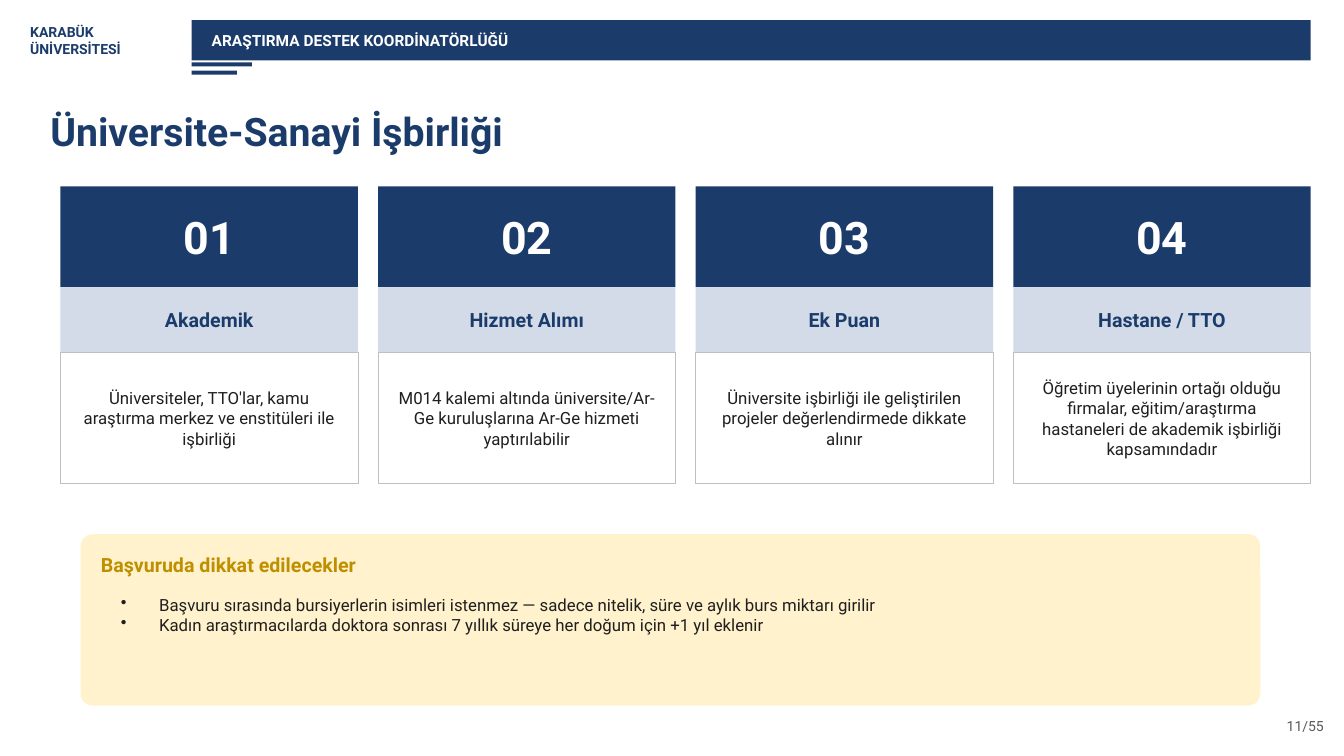
import pptx
import pptx.dml.color
import pptx.enum.shapes
import pptx.enum.text
import pptx.oxml.ns
import pptx.util
from lxml import etree

Inches = pptx.util.Inches
RGBColor = pptx.dml.color.RGBColor
ALIGN = pptx.enum.text.PP_ALIGN
ANCHOR = pptx.enum.text.MSO_ANCHOR
SHAPE = pptx.enum.shapes.MSO_SHAPE

NAVY = RGBColor(0x1B, 0x3C, 0x6B)
PALE_BLUE = RGBColor(0xD2, 0xDB, 0xE7)
WHITE = RGBColor(0xFF, 0xFF, 0xFF)
BORDER = RGBColor(0xBF, 0xBF, 0xBF)
INK = RGBColor(0x1F, 0x1F, 0x1F)
GREY = RGBColor(0x59, 0x59, 0x59)
CREAM = RGBColor(0xFF, 0xF2, 0xCC)
GOLD = RGBColor(0xBF, 0x8F, 0x00)

deck = pptx.Presentation()
deck.slide_width = Inches(13.33)
deck.slide_height = Inches(7.5)
page = deck.slides.add_slide(deck.slide_layouts[6])


def add_text(text, left, top, width, height, size=12, color=INK, bold=False,
             align=ALIGN.LEFT, anchor=ANCHOR.MIDDLE, inset=(0, 0), bullet=None):
    """Add a text box with one paragraph per line of text."""
    box = page.shapes.add_textbox(Inches(left), Inches(top), Inches(width), Inches(height))
    frame = box.text_frame
    frame.word_wrap = True
    frame.vertical_anchor = anchor
    frame.margin_left = frame.margin_right = Inches(inset[0])
    frame.margin_top = frame.margin_bottom = Inches(inset[1])
    for number, line in enumerate(text.split("\n")):
        para = frame.paragraphs[0] if number == 0 else frame.add_paragraph()
        para.alignment = align
        if bullet:
            props = para._p.get_or_add_pPr()
            props.set("marL", str(Inches(0.38)))
            props.set("indent", str(Inches(-0.38)))
            etree.SubElement(props, pptx.oxml.ns.qn("a:buChar"), char=bullet)
        span = para.add_run()
        span.text = line
        span.font.name = "Roboto"
        span.font.size = pptx.util.Pt(size)
        span.font.bold = bold
        span.font.color.rgb = color


def add_block(left, top, width, height, fill, line=None, kind=SHAPE.RECTANGLE):
    block = page.shapes.add_shape(kind, Inches(left), Inches(top), Inches(width), Inches(height))
    block.shadow.inherit = False
    block.fill.solid()
    block.fill.fore_color.rgb = fill
    if line is None:
        block.line.fill.background()
    else:
        block.line.color.rgb = line
        block.line.width = pptx.util.Pt(0.5)
    return block


# Header
add_text("KARABÜK\nÜNİVERSİTESİ", 0.3, 0.15, 1.5, 0.5, size=10, color=NAVY, bold=True)
add_block(1.9, 0.2, 11.1, 0.4, NAVY)
add_text("ARAŞTIRMA DESTEK KOORDİNATÖRLÜĞÜ", 2.1, 0.2, 10.9, 0.4,
         size=11, color=WHITE, bold=True)
add_block(1.9, 0.62, 0.6, 0.04, NAVY)
add_block(1.9, 0.7, 0.45, 0.04, NAVY)

# Page number and title
add_text("11/55", 12.13, 7.05, 1, 0.3, size=10, color=GREY, align=ALIGN.RIGHT)
add_text("Üniversite-Sanayi İşbirliği", 0.5, 0.95, 12.3, 0.7, size=28, color=NAVY, bold=True)

# Four numbered cards
cards = [
    ("Akademik", "Üniversiteler, TTO'lar, kamu araştırma merkez ve enstitüleri ile işbirliği"),
    ("Hizmet Alımı", "M014 kalemi altında üniversite/Ar-Ge kuruluşlarına Ar-Ge hizmeti yaptırılabilir"),
    ("Ek Puan", "Üniversite işbirliği ile geliştirilen projeler değerlendirmede dikkate alınır"),
    ("Hastane / TTO", "Öğretim üyelerinin ortağı olduğu firmalar, eğitim/araştırma hastaneleri de "
                      "akademik işbirliği kapsamındadır"),
]
card_width, card_gap = 2.95, 0.2
for index, (heading, body) in enumerate(cards):
    left = 0.6 + index * (card_width + card_gap)
    add_block(left, 1.85, card_width, 1, NAVY)
    add_text(f"{index + 1:02d}", left, 1.85, card_width, 1,
             size=32, color=WHITE, bold=True, align=ALIGN.CENTER)
    add_block(left, 2.85, card_width, 0.65, PALE_BLUE)
    add_text(heading, left, 2.85, card_width, 0.65,
             size=14, color=NAVY, bold=True, align=ALIGN.CENTER)
    add_block(left, 3.5, card_width, 1.3, WHITE, line=BORDER)
    add_text(body, left + 0.15, 3.55, card_width - 0.3, 1.2, align=ALIGN.CENTER)

# Application notes
panel = add_block(0.8, 5.3, 11.7, 1.7, CREAM, kind=SHAPE.ROUNDED_RECTANGLE)
panel.adjustments[0] = 0.07
add_text("Başvuruda dikkat edilecekler", 1, 5.4, 11.3, 0.4, size=14, color=GOLD, bold=True)
add_text("Başvuru sırasında bursiyerlerin isimleri istenmez — sadece nitelik, süre ve aylık "
         "burs miktarı girilir\n"
         "Kadın araştırmacılarda doktora sonrası 7 yıllık süreye her doğum için +1 yıl eklenir",
         1.1, 5.85, 11.2, 1.1, anchor=ANCHOR.TOP, inset=(0.1, 0.05), bullet="•")

deck.save("out.pptx")
